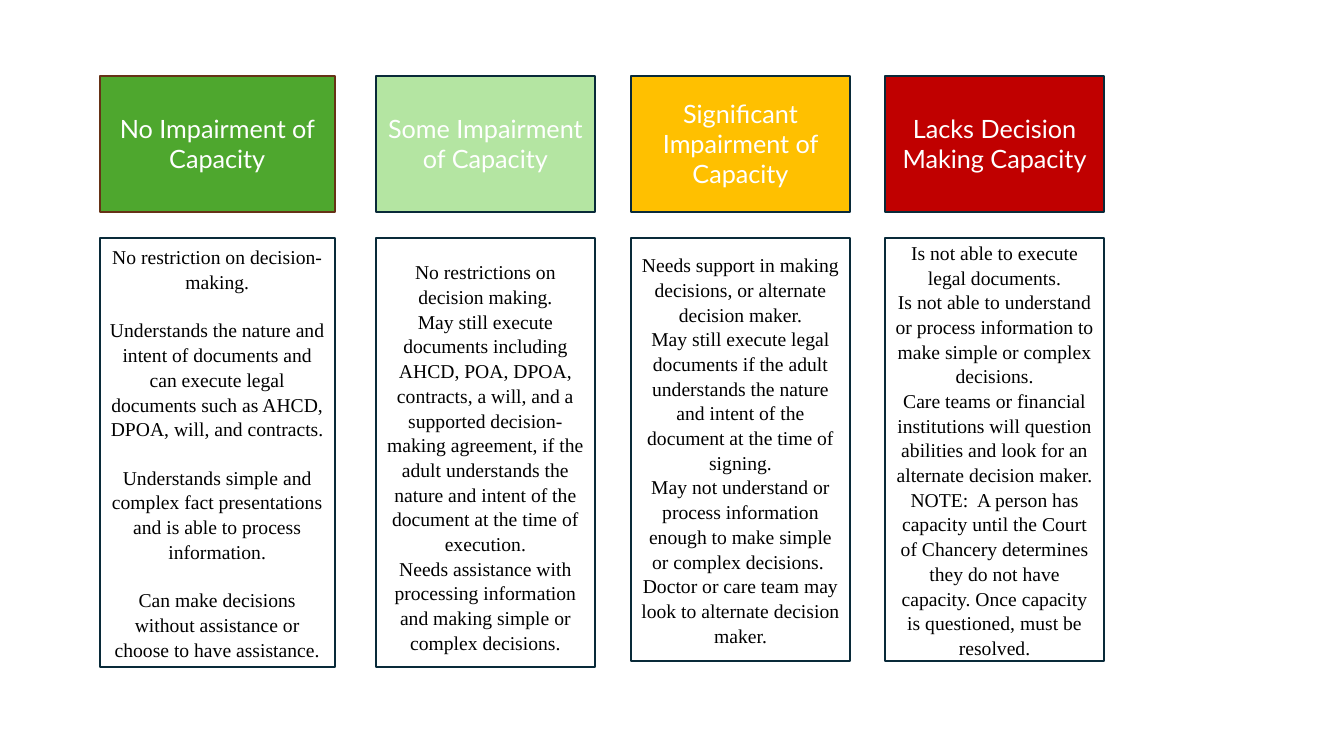
from pptx import Presentation
from pptx.dml.color import RGBColor
from pptx.enum.shapes import MSO_SHAPE
from pptx.enum.text import MSO_ANCHOR, PP_ALIGN
from pptx.util import Inches, Pt

RECTANGLE = MSO_SHAPE.RECTANGLE
MIDDLE = MSO_ANCHOR.MIDDLE
CENTER = PP_ALIGN.CENTER

NAVY = "092A39"
HEADING_TOP, HEADING_HEIGHT = 0.75, 1.35
DETAIL_TOP = 2.36

HEADING_FORMAT = {"name": "Lato", "size": Pt(18)}
DETAIL_FORMAT = {"name": "Times New Roman", "size": Pt(14)}


def color(hex_code):
    return RGBColor.from_string(hex_code)


def add_box(left, top, width, height, fill, outline, paragraphs, font_format, text_color, spacing):
    """Draw an outlined rectangle with centred paragraphs and return its text frame."""
    box = slide.shapes.add_shape(RECTANGLE, Inches(left), Inches(top), Inches(width), Inches(height))
    box.shadow.inherit = False
    box.fill.solid()
    box.fill.fore_color.rgb = color(fill)
    box.line.color.rgb = color(outline)
    box.line.width = Pt(1.5)
    frame = box.text_frame
    frame.word_wrap = True
    frame.vertical_anchor = MIDDLE
    frame.text = "\n".join(paragraphs)
    for paragraph in frame.paragraphs:
        for attribute, value in spacing.items():
            setattr(paragraph, attribute, value)
        font = paragraph.runs[0].font
        for attribute, value in font_format.items():
            setattr(font, attribute, value)
        font.color.rgb = color(text_color)
    return frame


# left, width, detail height, heading fill, heading outline, paragraph gap, top inset, heading, details
levels = [
    (0.99, 2.33, 4.26, "4EA72E", "663216", 17, 0.05, "No Impairment of Capacity", [
        "No restriction on decision-making.",
        "Understands the nature and intent of documents and can execute legal documents "
        "such as AHCD, DPOA, will, and contracts.",
        "Understands simple and complex fact presentations and is able to process information.",
        "Can make decisions without assistance or choose to have assistance.",
    ]),
    (3.73, 2.17, 4.26, "B4E5A2", NAVY, 0, 0.13, "Some Impairment of Capacity", [
        "No restrictions on decision making.",
        "May still execute documents including AHCD, POA, DPOA, contracts, a will, and a "
        "supported decision- making agreement, if the adult understands the nature and "
        "intent of the document at the time of execution.",
        "Needs assistance with processing information and making simple or complex decisions.",
    ]),
    (6.26, 2.17, 4.2, "FFC000", NAVY, 0, 0.05, "Significant Impairment of Capacity", [
        "Needs support in making decisions, or alternate decision maker.",
        "May still execute legal documents if the adult understands the nature and intent "
        "of the document at the time of signing.",
        "May not understand or process information enough to make simple or complex "
        "decisions.  Doctor or care team may look to alternate decision maker.",
    ]),
    (8.78, 2.17, 4.2, "C00000", NAVY, 0, 0.05, "Lacks Decision Making Capacity", [
        "Is not able to execute legal documents.",
        "Is not able to understand or process information to make simple or complex decisions.",
        "Care teams or financial institutions will question abilities and look for an "
        "alternate decision maker.",
        "NOTE:  A person has capacity until the Court of Chancery determines they do not "
        "have capacity. Once capacity is questioned, must be resolved.",
    ]),
]

presentation = Presentation()
presentation.slide_width = Inches(13.33)
presentation.slide_height = Inches(7.5)
slide = presentation.slides.add_slide(presentation.slide_layouts[6])

for left, width, detail_height, fill, outline, gap, top_inset, heading, details in levels:
    add_box(left, HEADING_TOP, width, HEADING_HEIGHT, fill, outline, [heading],
            HEADING_FORMAT, "FFFFFF", {"alignment": CENTER})
    detail_frame = add_box(left, DETAIL_TOP, width, detail_height, "FFFFFF", NAVY, details,
                           DETAIL_FORMAT, "000000", {"alignment": CENTER, "line_spacing": 1.05})
    detail_frame.margin_top = Inches(top_inset)
    for paragraph in detail_frame.paragraphs[1:]:
        paragraph.space_before = Pt(gap)

presentation.save("out.pptx")
